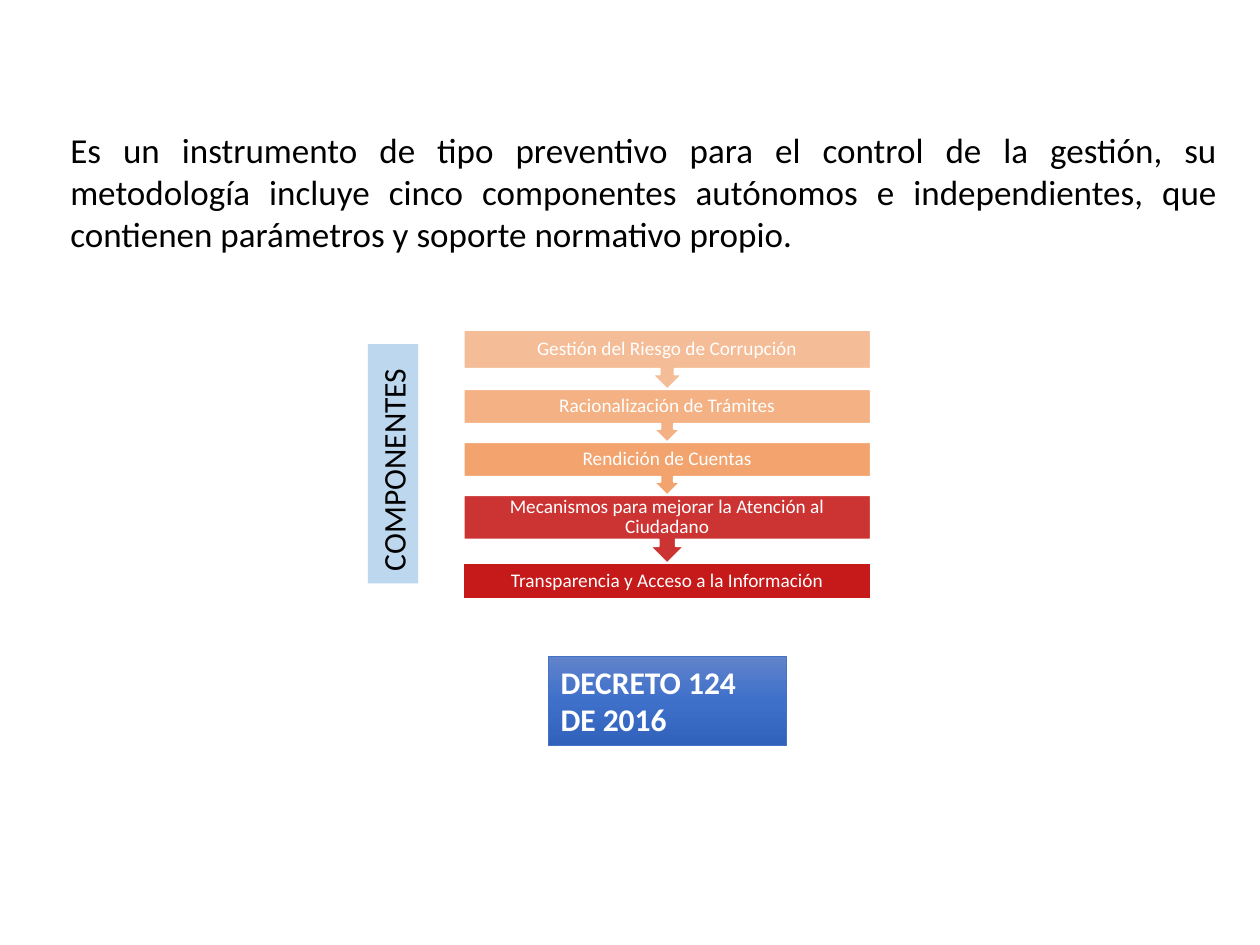
from copy import deepcopy

from pptx import Presentation
from pptx.dml.color import RGBColor
from pptx.enum.shapes import MSO_SHAPE as Preset
from pptx.enum.text import MSO_ANCHOR as Anchor, PP_ALIGN as Align
from pptx.oxml.ns import qn
from pptx.util import Inches, Pt

WHITE, BLACK = "FFFFFF", "000000"
RED, ORANGE = "C00000", "ED7D31"
BODY_SHARE = 0.65  # part of a callout above its arrow

# Text, height, colour and opacity of each component, top to bottom
COMPONENTS = [
    ("Gestión del Riesgo de Corrupción", 0.47, ORANGE, 50),
    ("Racionalización de Trámites", 0.42, ORANGE, 60),
    ("Rendición de Cuentas", 0.42, ORANGE, 70),
    ("Mecanismos para mejorar la Atención al Ciudadano", 0.54, RED, 80),
    ("Transparencia y Acceso a la Información", 0.28, RED, 90),
]


def rgb(value):
    return RGBColor.from_string(value)


def write(shape, text, size, color, bold=False, inset=None, anchor=Anchor.TOP, **layout):
    frame = shape.text_frame
    frame.word_wrap = True
    frame.vertical_anchor = anchor
    if inset is not None:
        for side in ("left", "top", "right", "bottom"):
            setattr(frame, f"margin_{side}", Inches(inset))
    paragraph = frame.paragraphs[0]
    for name, value in {"alignment": Align.LEFT, **layout}.items():
        setattr(paragraph, name, value)
    run = paragraph.add_run()
    run.text = text
    for name, value in {"name": "Calibri", "size": Pt(size), "bold": bold}.items():
        setattr(run.font, name, value)
    run.font.color.rgb = rgb(color)


def add_box(slide, preset, box, fill=None, line=None, line_width=1):
    shape = slide.shapes.add_shape(preset, *map(Inches, box))
    shape.shadow.inherit = False
    if fill:
        shape.fill.solid()
        shape.fill.fore_color.rgb = rgb(fill)
    if line:
        shape.line.color.rgb = rgb(line)
        shape.line.width = Pt(line_width)
    else:
        shape.line.fill.background()
    return shape


def set_opacity(shape, percent):
    color = shape._element.spPr.find(qn("a:solidFill"))[0]
    alpha = color.makeelement(qn("a:alpha"), {"val": str(percent * 1000)})
    color.append(alpha)


def set_gradient(shape, colors):
    shape.fill.gradient()
    shape.fill.gradient_angle = 270
    stop_list = shape._element.spPr.find(qn("a:gradFill")).find(qn("a:gsLst"))
    while len(stop_list) < len(colors):
        stop_list.append(deepcopy(stop_list[0]))
    for i, (stop, color) in enumerate(zip(shape.fill.gradient_stops, colors)):
        stop.position = i / (len(colors) - 1)
        stop.color.rgb = rgb(color)


def add_definition(slide, box):
    definition = slide.shapes.add_textbox(*map(Inches, box))
    write(definition,
          "Es un instrumento de tipo preventivo para el control de la gestión, "
          "su metodología incluye cinco componentes autónomos e independientes, "
          "que contienen parámetros y soporte normativo propio.",
          20, BLACK, alignment=Align.JUSTIFY)


def add_decree(slide, box):
    decree = add_box(slide, Preset.RECTANGLE, box, line="4472C4", line_width=0.5)
    set_gradient(decree, ["6183CB", "3E70CA", "3062BB"])
    write(decree, "DECRETO 124 DE 2016", 18, WHITE, bold=True)


def add_components(slide, left, top, width):
    # Stacked from the bottom, so that each arrow lies over the next step
    bottom = top + sum(height for _, height, _, _ in COMPONENTS)
    for text, height, color, opacity in reversed(COMPONENTS):
        bottom -= height
        is_last = text == COMPONENTS[-1][0]
        preset = Preset.RECTANGLE if is_last else Preset.UP_ARROW_CALLOUT
        step = add_box(slide, preset, (left, bottom, width, height), color, WHITE)
        set_opacity(step, opacity)
        if not is_last:
            step.rotation = 180
        label_height = height if is_last else height * BODY_SHARE
        label = slide.shapes.add_textbox(
            *map(Inches, (left, bottom, width, label_height)))
        write(label, text, 11, WHITE, inset=0.09, anchor=Anchor.MIDDLE,
              alignment=Align.CENTER, line_spacing=0.9)


def add_side_title(slide, box):
    title = add_box(slide, Preset.RECTANGLE, box, "BDD7EE")
    title.rotation = 270
    write(title, "COMPONENTES", 18, BLACK)


def main():
    deck = Presentation()
    deck.slide_width, deck.slide_height = Inches(10), Inches(7.5)
    slide = deck.slides.add_slide(deck.slide_layouts[6])

    add_definition(slide, (0.46, 0.97, 9.3, 5.43))
    add_decree(slide, (4.35, 5.21, 1.89, 0.71))
    add_components(slide, 3.68, 2.62, 3.23)
    add_side_title(slide, (2.17, 3.48, 1.9, 0.4))

    deck.save("out.pptx")


if __name__ == "__main__":
    main()
